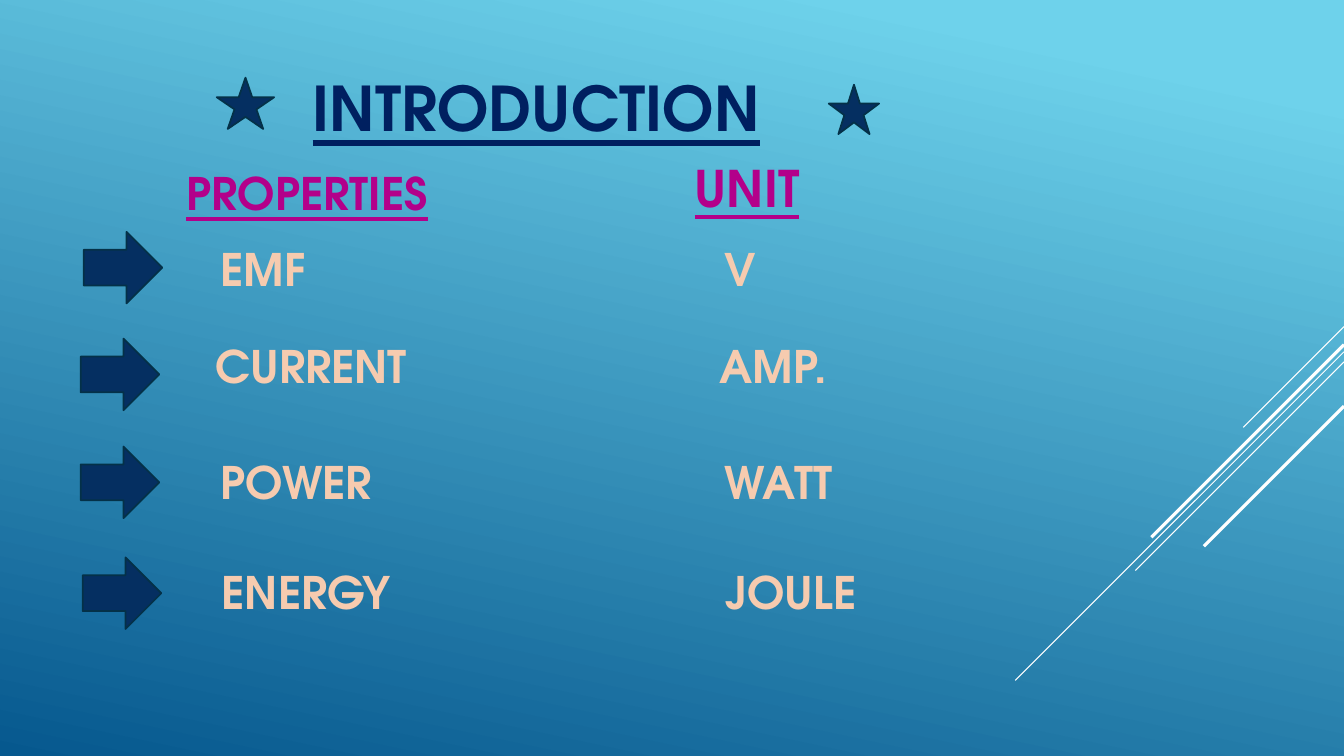
from dataclasses import dataclass

from lxml.etree import SubElement
from pptx import Presentation
from pptx.dml.color import RGBColor
from pptx.enum.shapes import MSO_CONNECTOR, MSO_SHAPE
from pptx.enum.text import MSO_ANCHOR, MSO_AUTO_SIZE, PP_ALIGN
from pptx.oxml.ns import qn
from pptx.util import Inches, Pt


@dataclass(frozen=True)
class Theme:
    font: str = "TeX Gyre Adventor"
    sky: str = "6ED2EB"
    deep: str = "06588E"
    title: str = "002060"
    heading: str = "B3008A"
    entry: str = "F6CBAF"
    marker: str = "052F61"
    marker_edge: str = "043148"
    streak: str = "FFFFFF"
    title_size: int = 44
    unit_size: int = 36
    text_size: int = 32
    edge_width: float = 1.25


def color(value):
    return RGBColor.from_string(value)


def inches(*values):
    return [Inches(value) for value in values]


def apply_format(target, values):
    for name, value in values.items():
        setattr(target, name, value)


class SlideBuilder:
    def __init__(self, deck, theme):
        self.theme = theme
        self.page = deck.slides.add_slide(deck.slide_layouts.get_by_name("Title Only"))

    def background(self, angle):
        fill = self.page.background.fill
        fill.gradient()
        fill.gradient_angle = angle
        stops = ((0.1, self.theme.sky), (1, self.theme.deep))
        for stop, (position, value) in zip(fill.gradient_stops, stops):
            stop.position = position
            stop.color.rgb = color(value)

    def streak(self, top, length, width):
        """Draw a 45-degree line down and left from the right edge."""
        right = 13.33
        line = self.page.shapes.add_connector(
            MSO_CONNECTOR.STRAIGHT, *inches(right, top, right - length, top + length))
        line.line.color.rgb = color(self.theme.streak)
        line.line.width = Pt(width)
        SubElement(line._element.spPr, qn("a:effectLst"))

    def marker(self, kind, left, top, width, height):
        shape = self.page.shapes.add_shape(kind, *inches(left, top, width, height))
        shape.shadow.inherit = False
        shape.fill.solid()
        shape.fill.fore_color.rgb = color(self.theme.marker)
        shape.line.color.rgb = color(self.theme.marker_edge)
        shape.line.width = Pt(self.theme.edge_width)

    def fill_text(self, box, text, size, value, underline=False):
        frame = box.text_frame
        apply_format(frame, {"word_wrap": True, "vertical_anchor": MSO_ANCHOR.TOP,
                             "auto_size": MSO_AUTO_SIZE.SHAPE_TO_FIT_TEXT})
        para = frame.paragraphs[0]
        para.alignment = PP_ALIGN.LEFT
        span = para.add_run()
        span.text = text
        apply_format(span.font, {"name": self.theme.font, "size": Pt(size),
                                 "bold": True, "underline": underline})
        span.font.color.rgb = color(value)
        return para

    def title(self, text, left, top, width, height):
        box = self.page.shapes.title
        apply_format(box, dict(zip(("left", "top", "width", "height"),
                                   inches(left, top, width, height))))
        self.fill_text(box, text, self.theme.title_size, self.theme.title, True)

    def heading(self, text, size, left, top, width, height):
        box = self.page.shapes.add_textbox(*inches(left, top, width, height))
        self.fill_text(box, text, size, self.theme.heading, True)

    def entry(self, name, unit, left, top, width):
        """Place a property and its unit, set apart by one tab stop."""
        box = self.page.shapes.add_textbox(*inches(left, top, width, 0.64))
        para = self.fill_text(box, f"{name}\t{unit}", self.theme.text_size, self.theme.entry)
        tabs = SubElement(para._p.get_or_add_pPr(), qn("a:tabLst"))
        SubElement(tabs, qn("a:tab"), pos=str(Inches(5)), algn="l")


def main():
    deck = Presentation()
    deck.slide_width, deck.slide_height = inches(13.33, 7.5)
    theme = Theme()
    slide = SlideBuilder(deck, theme)

    slide.background(angle=258)
    for top, length, width in ((3.24, 1, 0.75), (3.49, 3.26, 0.75), (3.59, 2.07, 0.75),
                               (3.42, 1.91, 2.25), (4.03, 1.39, 2.25)):
        slide.streak(top, length, width)

    slide.title("INTRODUCTION", 3, 0.64, 5.07, 0.84)
    slide.marker(MSO_SHAPE.STAR_5_POINT, 2.15, 0.77, 0.57, 0.51)
    slide.marker(MSO_SHAPE.STAR_5_POINT, 8.22, 0.84, 0.5, 0.49)

    slide.heading("PROPERTIES", theme.text_size, 1.75, 1.59, 4.38, 0.64)
    slide.heading("UNIT", theme.unit_size, 6.79, 1.51, 2.87, 0.71)

    rows = (
        ("EMF", "V", (2.09, 2.35, 9.59), (0.83, 2.3)),
        ("CURRENT", "AMP.", (2.04, 3.31, 7.42), (0.8, 3.36)),
        ("POWER", "WATT", (2.09, 4.46, 8.37), (0.8, 4.43)),
        ("ENERGY", "JOULE", (2.1, 5.55, 8.52), (0.82, 5.53)),
    )
    for name, unit, text_place, arrow_place in rows:
        slide.marker(MSO_SHAPE.RIGHT_ARROW, *arrow_place, 0.78, 0.71)
        slide.entry(name, unit, *text_place)

    deck.save("out.pptx")


if __name__ == "__main__":
    main()
